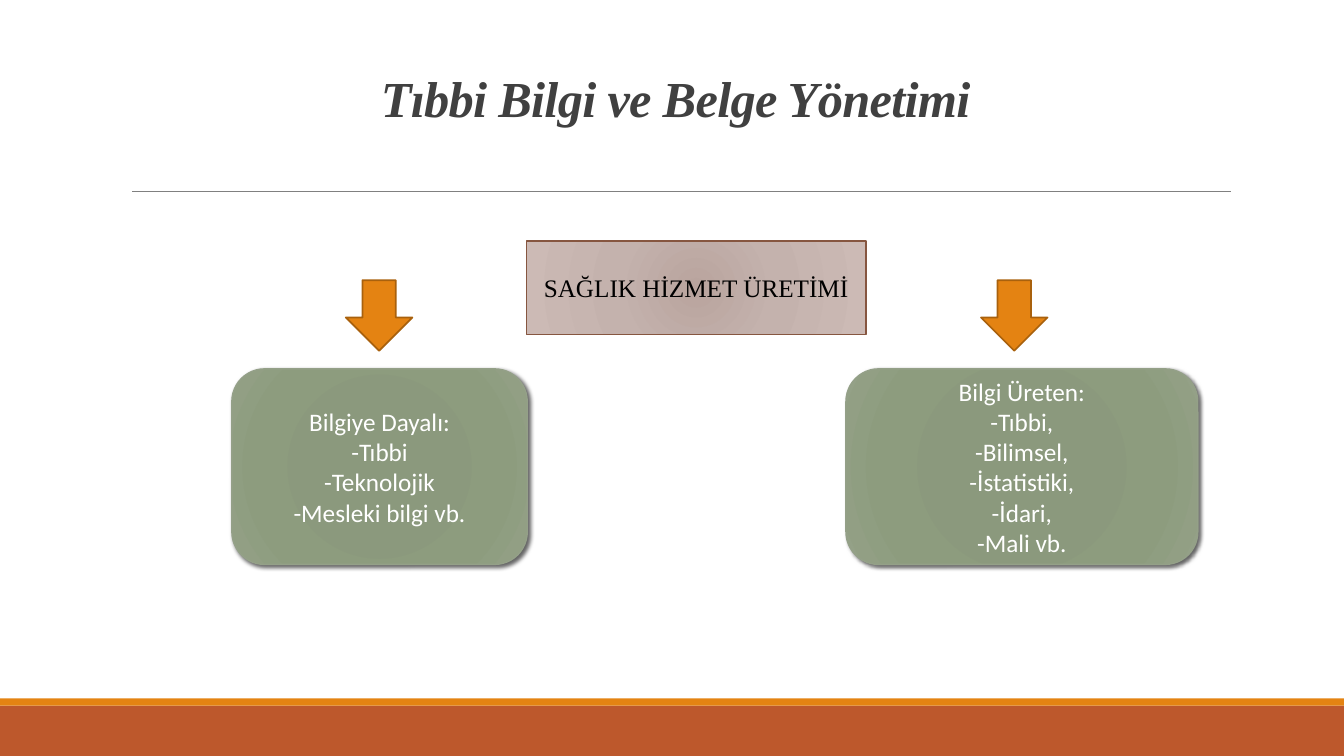
from dataclasses import dataclass

import lxml.etree
import pptx
import pptx.dml.color
import pptx.enum.shapes
import pptx.enum.text
import pptx.oxml.ns
import pptx.util

Inches = pptx.util.Inches
Pt = pptx.util.Pt
RGBColor = pptx.dml.color.RGBColor
SHAPE = pptx.enum.shapes.MSO_SHAPE
ALIGN = pptx.enum.text.PP_ALIGN
ANCHOR = pptx.enum.text.MSO_ANCHOR
qn = pptx.oxml.ns.qn

WHITE = RGBColor(0xFF, 0xFF, 0xFF)
BLACK = RGBColor(0, 0, 0)
DARK = RGBColor(0x40, 0x40, 0x40)
GRAY = RGBColor(0x80, 0x80, 0x80)
RUST = RGBColor(0xBD, 0x58, 0x2C)
ORANGE = RGBColor(0xE4, 0x83, 0x12)
ARROW_EDGE = RGBColor(0xA9, 0x61, 0x0D)
BROWN = RGBColor(0x86, 0x56, 0x40)
SAGE = RGBColor(0x94, 0xA0, 0x88)

ROSE_STOPS = (
    (0, RGBColor(0xB9, 0xA4, 0x9E)),
    (45, RGBColor(0xC4, 0xB2, 0xAD)),
    (100, RGBColor(0xCC, 0xBA, 0xB5)),
)
SAGE_STOPS = (
    (0, RGBColor(0x8A, 0x98, 0x7B)),
    (34, RGBColor(0x8B, 0x99, 0x7D)),
    (70, RGBColor(0x8D, 0x9C, 0x7E)),
    (100, RGBColor(0x94, 0xA1, 0x87)),
)


@dataclass(frozen=True)
class Box:
    kind: int
    left: float
    top: float
    width: float
    height: float
    stops: tuple
    edge: RGBColor
    font: str
    color: RGBColor
    lines: tuple
    shadow: bool = False


BOXES = (
    Box(SHAPE.RECTANGLE, 5.22, 2.39, 3.37, 0.93, ROSE_STOPS, BROWN,
        "Times New Roman", BLACK, ("SAĞLIK HİZMET ÜRETİMİ",)),
    Box(SHAPE.ROUNDED_RECTANGLE, 2.3, 3.66, 2.93, 1.94, SAGE_STOPS, SAGE, "Calibri", WHITE,
        ("Bilgiye Dayalı:", "-Tıbbi", "-Teknolojik", "-Mesleki bilgi vb."), True),
    Box(SHAPE.ROUNDED_RECTANGLE, 8.39, 3.66, 3.49, 1.94, SAGE_STOPS, SAGE, "Calibri", WHITE,
        ("Bilgi Üreten:", "-Tıbbi,", "-Bilimsel,", "-İstatistiki,", "-İdari,", "-Mali vb."), True),
)


def add_child(parent, tag: str, **attrs):
    return lxml.etree.SubElement(parent, qn(tag), {k: str(v) for k, v in attrs.items()})


def add_plain(slide, kind: int, left: float, top: float, width: float, height: float):
    sp = slide.shapes.add_shape(kind, Inches(left), Inches(top), Inches(width), Inches(height))
    sp.shadow.inherit = False
    return sp


def fill_solid(sp, color: RGBColor) -> None:
    sp.fill.solid()
    sp.fill.fore_color.rgb = color


def fill_radial(sp, stops: tuple) -> None:
    sp.fill.gradient()
    grad = sp._element.spPr.find(qn("a:gradFill"))
    for child in list(grad):
        grad.remove(child)
    gs_list = add_child(grad, "a:gsLst")
    for pos, color in stops:
        gs = add_child(gs_list, "a:gs", pos=pos * 1000)
        add_child(gs, "a:srgbClr", val=color)
    radial = add_child(grad, "a:path", path="circle")
    add_child(radial, "a:fillToRect", l=100000, t=100000, r=100000, b=100000)


def add_shadow(sp) -> None:
    effects = sp._element.spPr.find(qn("a:effectLst"))
    shadow = add_child(effects, "a:outerShdw", blurRad=Pt(3), dist=Pt(2),
                       dir=45 * 60000, algn="ctr", rotWithShape=0)
    color = add_child(shadow, "a:srgbClr", val=BLACK)
    add_child(color, "a:alpha", val=60000)


def add_band(slide, top: float, height: float, color: RGBColor) -> None:
    sp = add_plain(slide, SHAPE.RECTANGLE, 0, top, 13.33, height)
    fill_solid(sp, color)
    sp.line.fill.background()


def add_rule(slide) -> None:
    line = slide.shapes.add_connector(pptx.enum.shapes.MSO_CONNECTOR.STRAIGHT,
                                      Inches(1.31), Inches(1.9), Inches(12.21), Inches(1.9))
    line.line.color.rgb = GRAY
    line.line.width = Pt(0.5)
    add_child(line._element.spPr, "a:effectLst")


def set_title(slide) -> None:
    title = slide.shapes.title
    title.left, title.top = Inches(1.2), Inches(0.31)
    title.width, title.height = Inches(11), Inches(1.01)
    tf = title.text_frame
    tf.auto_size = pptx.enum.text.MSO_AUTO_SIZE.NONE
    tf.vertical_anchor = ANCHOR.BOTTOM
    p = tf.paragraphs[0]
    p.text = "Tıbbi Bilgi ve Belge Yönetimi"
    p.alignment = ALIGN.CENTER
    p.line_spacing = 0.85
    p.font.name = "Times New Roman"
    p.font.size = Pt(36)
    p.font.bold = p.font.italic = True
    p.font.color.rgb = DARK
    p.runs[0]._r.get_or_add_rPr().set("spc", "-50")


def add_box(slide, box: Box) -> None:
    sp = add_plain(slide, box.kind, box.left, box.top, box.width, box.height)
    fill_radial(sp, box.stops)
    sp.line.color.rgb = box.edge
    sp.line.width = Pt(1)
    if box.shadow:
        add_shadow(sp)
    tf = sp.text_frame
    tf.word_wrap = True
    tf.vertical_anchor = ANCHOR.MIDDLE
    for i, text in enumerate(box.lines):
        p = tf.add_paragraph() if i else tf.paragraphs[0]
        p.text = text
        p.alignment = ALIGN.CENTER
        p.font.name = box.font
        p.font.size = Pt(18)
        p.font.color.rgb = box.color


def add_arrow(slide, left: float) -> None:
    sp = add_plain(slide, SHAPE.DOWN_ARROW, left, 2.78, 0.66, 0.7)
    fill_solid(sp, ORANGE)
    sp.line.color.rgb = ARROW_EDGE
    sp.line.width = Pt(1.25)


def main() -> None:
    prs = pptx.Presentation()
    prs.slide_width, prs.slide_height = Inches(13.33), Inches(7.5)
    slide = prs.slides.add_slide(prs.slide_layouts[5])
    add_band(slide, 7, 0.5, RUST)
    add_band(slide, 6.93, 0.07, ORANGE)
    add_rule(slide)
    set_title(slide)
    for box in BOXES:
        add_box(slide, box)
    for left in (3.43, 9.73):
        add_arrow(slide, left)
    prs.save("out.pptx")


if __name__ == "__main__":
    main()
